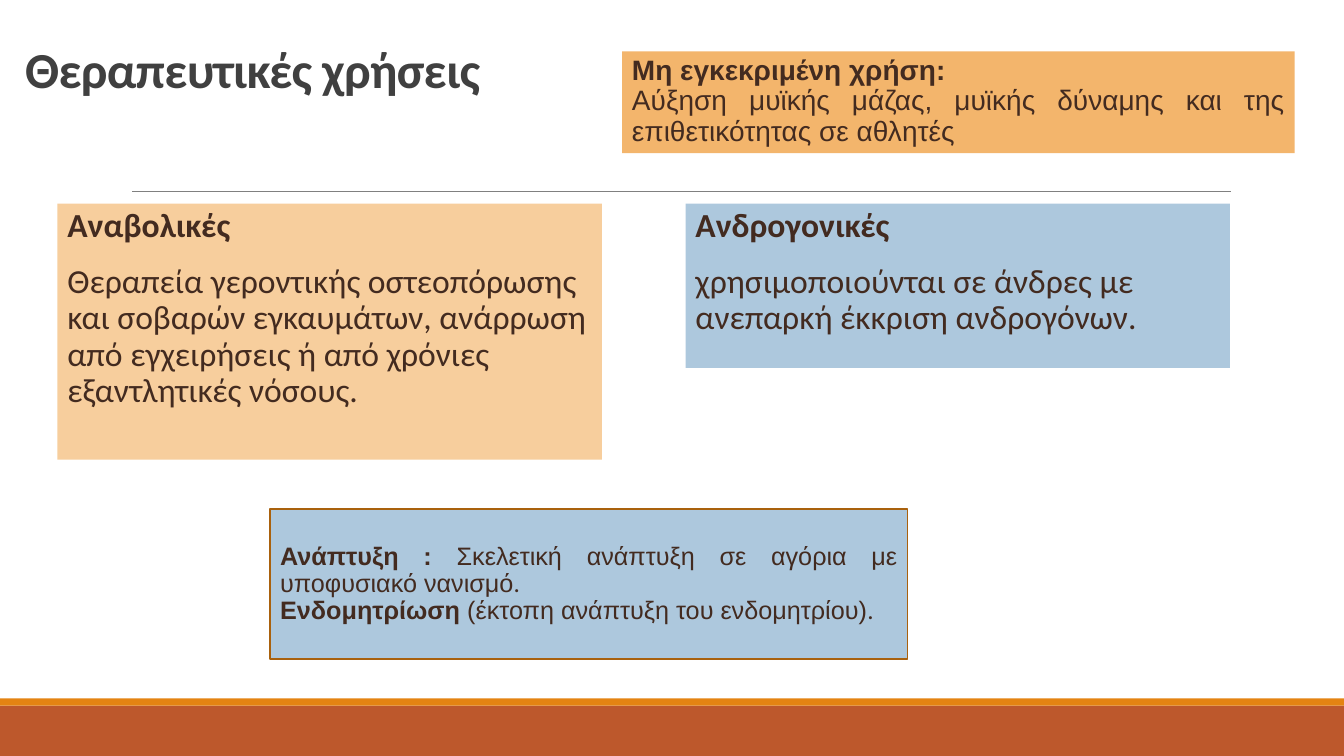
from lxml.etree import SubElement
from pptx import Presentation
from pptx.dml.color import RGBColor
from pptx.enum.shapes import MSO_CONNECTOR, MSO_SHAPE
from pptx.enum.text import MSO_ANCHOR, MSO_AUTO_SIZE, PP_ALIGN
from pptx.oxml.ns import qn
from pptx.util import Inches, Pt


def color(value):
    """Turn a hex string into a colour."""
    return RGBColor.from_string(value)


class SlideBuilder:
    """Hold the style and the current slide."""

    TEXT, TITLE, BLUE = "432B20", "404040", "ADC8DD"

    def __init__(self, presentation):
        """Add a title-only slide."""
        self.slide = presentation.slides.add_slide(presentation.slide_layouts[5])

    def apply(self, target, formats):
        """Set each attribute named in the formats."""
        for name, value in formats.items():
            setattr(target, name, value)

    def fill_text(self, shape, paragraphs, size, font, ink, layout, frame):
        """Fill a shape with paragraphs of (text, bold, font) runs."""
        text_frame = shape.text_frame
        self.apply(text_frame, {"word_wrap": True, "auto_size": MSO_AUTO_SIZE.NONE, **frame})
        for index, runs in enumerate(paragraphs):
            paragraph = text_frame.add_paragraph() if index else text_frame.paragraphs[0]
            self.apply(paragraph, layout)
            for text, bold, *other_font in runs:
                run = paragraph.add_run()
                run.text = text
                name = other_font[0] if other_font else font
                self.apply(run.font, {"name": name, "size": Pt(size), "bold": bold})
                run.font.color.rgb = color(ink)

    def title(self, text, left, top, width, height):
        """Place the title with tight letter spacing."""
        shape = self.slide.shapes.title
        self.apply(shape, {"left": Inches(left), "top": Inches(top),
                           "width": Inches(width), "height": Inches(height)})
        self.fill_text(shape, [[(text, True)]], 36, "Calibri", self.TITLE,
                       {"alignment": PP_ALIGN.LEFT, "line_spacing": 0.85},
                       {"vertical_anchor": MSO_ANCHOR.BOTTOM})
        run = shape.text_frame.paragraphs[0].runs[0]
        run.font._element.set("spc", "-50")

    def box(self, left, top, width, height, fill, line=None):
        """Add a filled rectangle with an optional outline."""
        shape = self.slide.shapes.add_shape(
            MSO_SHAPE.RECTANGLE, Inches(left), Inches(top), Inches(width), Inches(height))
        shape.shadow.inherit = False
        shape.fill.solid()
        shape.fill.fore_color.rgb = color(fill)
        if line:
            shape.line.color.rgb = color(line)
            shape.line.width = Pt(1.25)
        else:
            shape.line.fill.background()
        return shape

    def rule(self, left, right, top):
        """Add a thin horizontal line."""
        line = self.slide.shapes.add_connector(
            MSO_CONNECTOR.STRAIGHT, Inches(left), Inches(top), Inches(right), Inches(top))
        line.line.color.rgb = color("808080")
        line.line.width = Pt(0.5)
        SubElement(line._element.spPr, qn("a:effectLst"))

    def use_card(self, left, height, fill, heading, text):
        """Add a card with a bold heading and a description."""
        shape = self.box(left, 2.02, 5.4, height, fill)
        self.fill_text(shape, [[(heading, True)], [(text, False)]], 24, "Calibri", self.TEXT,
                       {"alignment": PP_ALIGN.LEFT, "line_spacing": 0.9,
                        "space_before": Pt(12), "space_after": Pt(2)},
                       {"vertical_anchor": MSO_ANCHOR.TOP, "margin_right": 0})

    def note(self, shape, paragraphs, size, anchor):
        """Put justified text in a box."""
        self.fill_text(shape, paragraphs, size, "Arial", self.TEXT,
                       {"alignment": PP_ALIGN.JUSTIFY, "line_spacing": 0.9},
                       {"vertical_anchor": anchor})


def main():
    """Build and save the slide."""
    presentation = Presentation()
    presentation.slide_width, presentation.slide_height = Inches(13.33), Inches(7.5)
    builder = SlideBuilder(presentation)
    builder.box(0, 7, 13.33, 0.5, "BD582C")
    builder.box(0, 6.93, 13.33, 0.07, "E48312")
    builder.rule(1.31, 12.21, 1.9)
    builder.title("Θεραπευτικές χρήσεις", 0.15, 0.19, 6.24, 0.84)
    builder.use_card(0.57, 2.54, "F7CE9D", "Αναβολικές",
                     "Θεραπεία γεροντικής οστεοπόρωσης και σοβαρών εγκαυμάτων, "
                     "ανάρρωση από εγχειρήσεις ή από χρόνιες εξαντλητικές νόσους.")
    builder.use_card(6.8, 1.63, builder.BLUE, "Ανδρογονικές",
                     "χρησιμοποιούνται σε άνδρες με ανεπαρκή έκκριση ανδρογόνων.")
    growth = builder.box(2.68, 5.05, 6.32, 1.49, builder.BLUE, "A9610D")
    full_stop = (".", False, "Calibri")
    builder.note(growth, [
        [("Ανάπτυξη :", True),
         (" Σκελετική ανάπτυξη σε αγόρια με υποφυσιακό νανισμό", False), full_stop],
        [("Ενδομητρίωση", True), (" (έκτοπη ανάπτυξη του ενδομητρίου)", False), full_stop],
    ], 18, MSO_ANCHOR.MIDDLE)
    unapproved = builder.box(6.17, 0.51, 6.67, 1.01, "F3B56C")
    builder.note(unapproved, [
        [("Μη εγκεκριμένη χρήση:", True)],
        [("Αύξηση μυϊκής μάζας, μυϊκής δύναμης και της επιθετικότητας σε αθλητές", False)],
    ], 20, MSO_ANCHOR.TOP)
    presentation.save("out.pptx")


if __name__ == "__main__":
    main()
